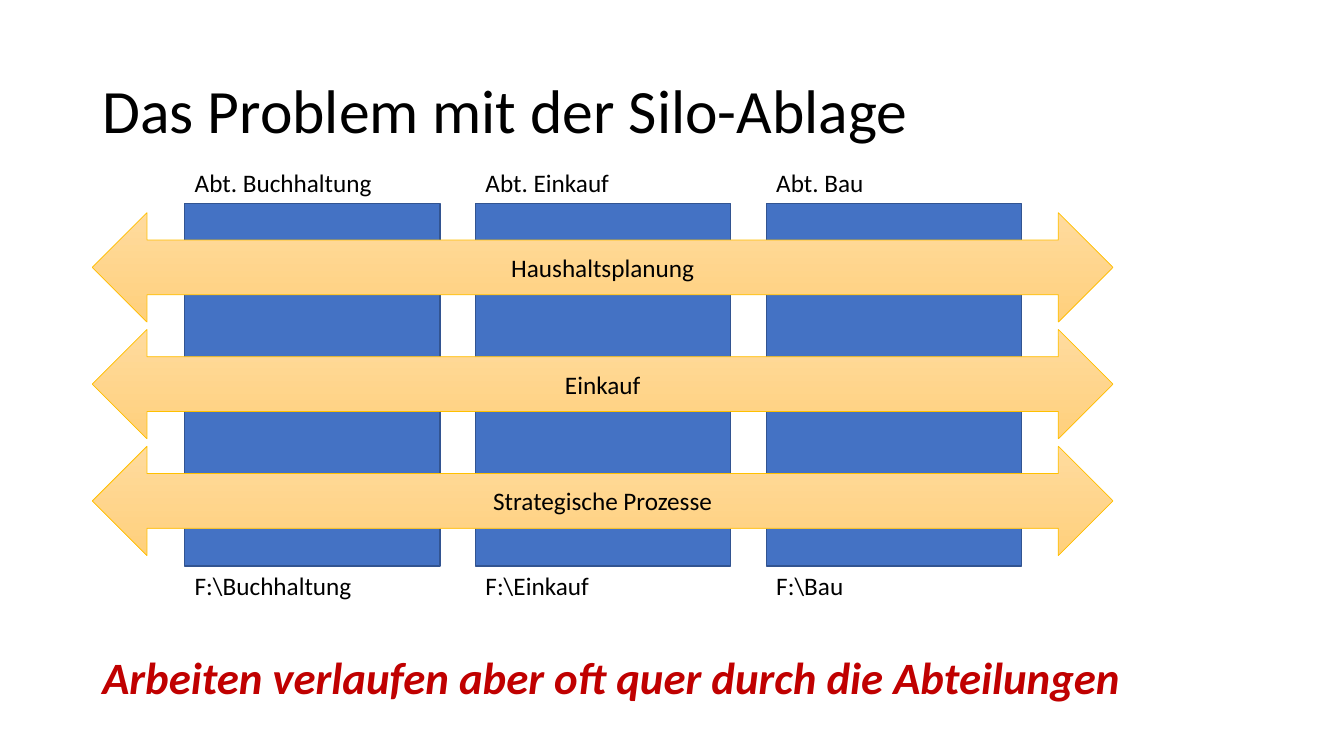
from pptx import Presentation
from pptx.dml.color import RGBColor
from pptx.enum import shapes, text
from pptx.util import Pt

TITLE = "Das Problem mit der Silo-Ablage"
SILOS = [
    ("Abt. Buchhaltung", "F:\\Buchhaltung"),
    ("Abt. Einkauf", "F:\\Einkauf"),
    ("Abt. Bau", "F:\\Bau"),
]
PROCESSES = ["Haushaltsplanung", "Einkauf", "Strategische Prozesse"]
CONCLUSION = "Arbeiten verlaufen aber oft quer durch die Abteilungen"

BLACK = RGBColor(0x00, 0x00, 0x00)
RED = RGBColor(0xC0, 0x00, 0x00)
BLUE = RGBColor(0x44, 0x72, 0xC4)
DARK_BLUE = RGBColor(0x32, 0x54, 0x91)
GOLD = RGBColor(0xFF, 0xC0, 0x00)
GRADIENT = [RGBColor(0xFF, 0xDB, 0x9E), RGBColor(0xFF, 0xD0, 0x7C)]

MARGIN = 66
SILO_LEFT, SILO_TOP, SILO_W, SILO_H, SILO_STEP = 132, 145.2, 182.2, 259, 207.7
LABEL_H = 29.08
ARROW_TOP, ARROW_W, ARROW_H, ARROW_STEP = 152, 729, 78, 83.4


def box(x, y, w, h):
    return Pt(x), Pt(y), Pt(w), Pt(h)


def write(sp, words, size=18, align=text.PP_ALIGN.LEFT,
          anchor=text.MSO_ANCHOR.TOP, wrap=True, **font):
    tf = sp.text_frame
    tf.text = words
    tf.word_wrap = wrap
    tf.auto_size = text.MSO_AUTO_SIZE.NONE
    tf.vertical_anchor = anchor
    p = tf.paragraphs[0]
    p.alignment = align
    r = p.runs[0]
    color = font.pop("color", BLACK)
    for name, value in dict(name="Calibri", size=Pt(size), **font).items():
        setattr(r.font, name, value)
    r.font.color.rgb = color
    return p


def add_outlined(parent, kind, bounds, color, width):
    sp = parent.add_shape(kind, *bounds)
    sp.shadow.inherit = False
    sp.line.color.rgb = color
    sp.line.width = Pt(width)
    return sp


def add_silo(parent, x, department, folder):
    sp = add_outlined(parent, shapes.MSO_SHAPE.RECTANGLE,
                      box(x, SILO_TOP, SILO_W, SILO_H), DARK_BLUE, 1)
    sp.fill.solid()
    sp.fill.fore_color.rgb = BLUE
    for y, words in ((SILO_TOP - LABEL_H, department), (SILO_TOP + SILO_H, folder)):
        write(parent.add_textbox(*box(x, y, SILO_W, LABEL_H)), words)


def add_process(parent, y, words):
    sp = add_outlined(parent, shapes.MSO_SHAPE.LEFT_RIGHT_ARROW,
                      box(MARGIN, y, ARROW_W, ARROW_H), GOLD, 0.5)
    sp.fill.gradient()
    sp.fill.gradient_angle = 270
    for stop, position, color in zip(sp.fill.gradient_stops, (0, 1), GRADIENT):
        stop.position = position
        stop.color.rgb = color
    write(sp, words, align=text.PP_ALIGN.CENTER, anchor=text.MSO_ANCHOR.MIDDLE)


def main():
    prs = Presentation()
    prs.slide_width, prs.slide_height = Pt(960), Pt(540)
    s = prs.slides.add_slide(prs.slide_layouts[5])

    title = s.shapes.title
    title.left, title.top, title.width, title.height = box(MARGIN, 28.75, 828, 104.4)
    p = write(title, TITLE, 44, anchor=text.MSO_ANCHOR.MIDDLE)
    p.line_spacing = 0.9

    silos = s.shapes.add_group_shape().shapes
    for i, (department, folder) in enumerate(SILOS):
        add_silo(silos, SILO_LEFT + i * SILO_STEP, department, folder)

    processes = s.shapes.add_group_shape().shapes
    for i, words in enumerate(PROCESSES):
        add_process(processes, ARROW_TOP + i * ARROW_STEP, words)

    write(s.shapes.add_textbox(*box(MARGIN, 460.8, 749.5, 46)), CONCLUSION, 32,
          wrap=False, color=RED, bold=True, italic=True)
    prs.save("out.pptx")


if __name__ == "__main__":
    main()
